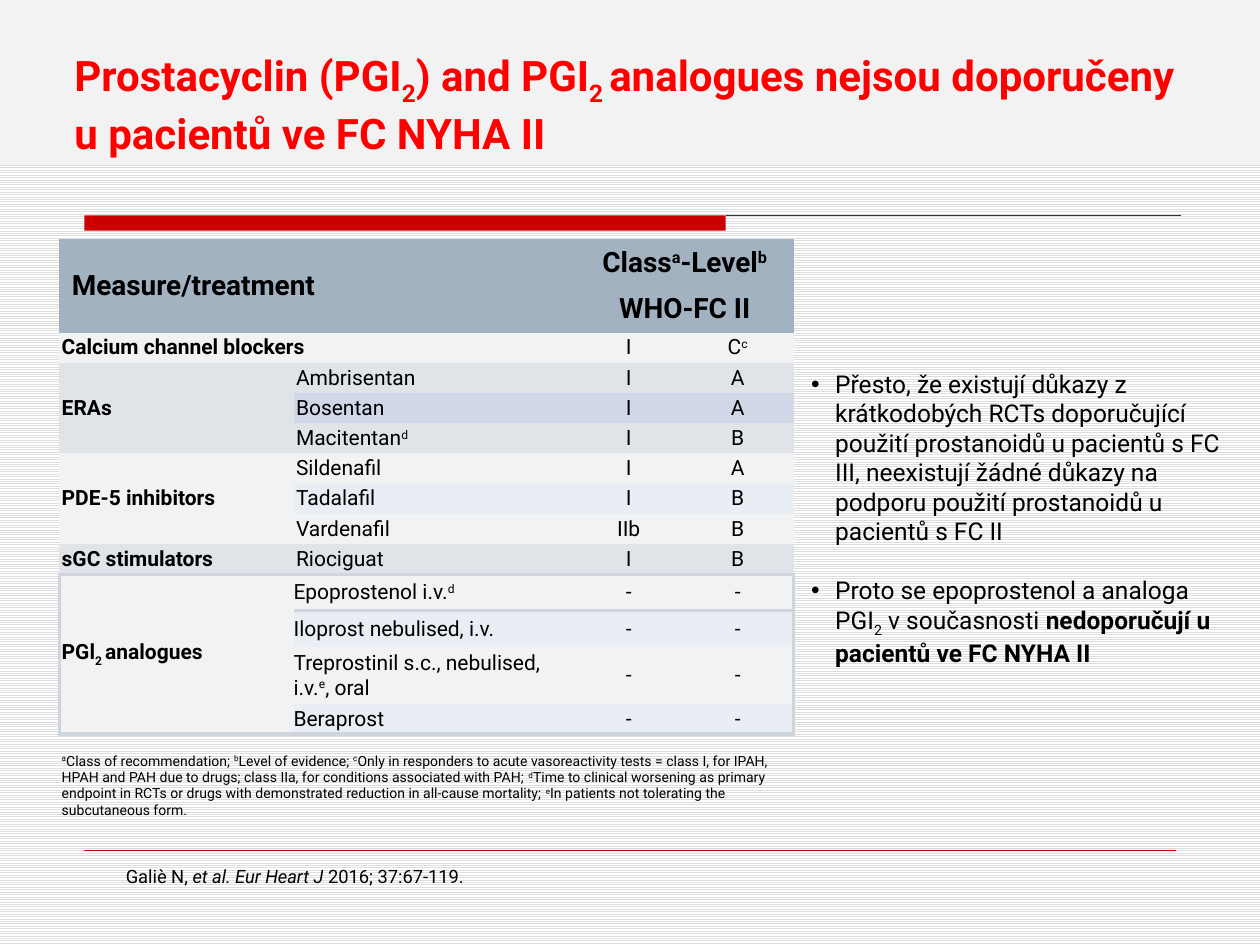
from lxml import etree
from pptx import Presentation
from pptx.dml.color import RGBColor
from pptx.enum.dml import MSO_PATTERN
from pptx.enum.shapes import MSO_CONNECTOR, MSO_SHAPE
from pptx.enum.text import MSO_ANCHOR, MSO_AUTO_SIZE, PP_ALIGN
from pptx.oxml import parse_xml
from pptx.oxml.ns import nsdecls, qn
from pptx.util import Inches, Pt

TOP, MIDDLE, BOTTOM = MSO_ANCHOR.TOP, MSO_ANCHOR.MIDDLE, MSO_ANCHOR.BOTTOM
LEFT, CENTER, RIGHT = PP_ALIGN.LEFT, PP_ALIGN.CENTER, PP_ALIGN.RIGHT
THEME = {
    "font": "Roboto", "text": "000000", "title": "FF0000", "red": "CC0000",
    "rule": "333333", "band": "F2F2F2", "stripe": "DDDDDD", "paper": "FFFFFF",
    "header": "A3B2C1", "pale": "F0F2F4", "grey": "E0E4E9",
    "blue": "D0D8E8", "ice": "E9EDF4", "frame": "CED5DD",
    "title_pt": 24, "header_pt": 16, "body_pt": 14, "cell_pt": 12,
    "cite_pt": 10.5, "note_pt": 8, "frame_pt": 2.25,
}
NO_STYLE = "{2D5ABB26-0587-4C30-8999-92F81FD0307C}"
BASELINE = {"^": "30000", "_": "-25000"}


def color(name):
    return RGBColor.from_string(THEME[name])


def write(p, runs, size, align=LEFT, bold=False, fill="text"):
    """Runs are (text, marks): ^ superscript, _ subscript, b bold, i italic."""
    p.alignment = align
    for text, marks in runs:
        r = p.add_run()
        r.text = text
        r.font.name, r.font.size = THEME["font"], Pt(THEME[size])
        r.font.color.rgb = color(fill)
        r.font.bold = bold or "b" in marks
        r.font.italic = "i" in marks
        for mark in marks:
            if mark in BASELINE:
                r.font._element.set("baseline", BASELINE[mark])


prs = Presentation()
prs.slide_width, prs.slide_height = Inches(10), Inches(7.5)
s = prs.slides.add_slide(prs.slide_layouts[5])

# Striped background
bg = s.background.fill
bg.patterned()
bg.pattern = MSO_PATTERN.LIGHT_HORIZONTAL
bg.fore_color.rgb, bg.back_color.rgb = color("stripe"), color("paper")

# Title band and red bar
for box, name in (((0, 0, 10, 1.31), "band"), ((0.67, 1.71, 5.09, 0.12), "red")):
    sp = s.shapes.add_shape(MSO_SHAPE.RECTANGLE, *map(Inches, box))
    sp.shadow.inherit = False
    sp.fill.solid()
    sp.fill.fore_color.rgb = color(name)
    sp.line.fill.background()
    s.shapes._spTree.remove(sp._element)
    s.shapes._spTree.insert(2 + (name == "red"), sp._element)

# Rules under the title and above the citation
for x1, x2, y, name, width in ((5.76, 9.37, 1.71, "rule", 0.75),
                               (0.67, 9.33, 6.75, "red", 0.25)):
    line = s.shapes.add_connector(MSO_CONNECTOR.STRAIGHT,
                                  Inches(x1), Inches(y), Inches(x2), Inches(y))
    line.line.color.rgb, line.line.width = color(name), Pt(width)
    etree.SubElement(line._element.spPr, qn("a:effectLst"))

# Title
title = s.shapes.title
title.left, title.top, title.width, title.height = map(Inches, (0.49, 0.05, 9, 1.25))
tf = title.text_frame
tf.vertical_anchor, tf.auto_size = BOTTOM, MSO_AUTO_SIZE.NONE
write(tf.paragraphs[0],
      [("Prostacyclin (PGI", ""), ("2", "_"), (") and PGI", ""), ("2 ", "_"),
       ("analogues nejsou doporučeny u pacientů ve FC NYHA II", "")],
      "title_pt", bold=True, fill="title")

# Comments beside the table
tf = s.shapes.add_textbox(*map(Inches, (6.34, 2.88, 3.53, 2.46))).text_frame
tf.word_wrap, tf.auto_size = True, MSO_AUTO_SIZE.SHAPE_TO_FIT_TEXT
comments = [
    [("Přesto, že existují důkazy z krátkodobých RCTs doporučující použití "
      "prostanoidů u pacientů s FC III, neexistují žádné důkazy na podporu "
      "použití prostanoidů u pacientů s FC II", "")],
    [("Proto se epoprostenol a analoga PGI", ""), ("2", "_"), (" v současnosti ", ""),
     ("nedoporučují u pacientů ve FC NYHA II", "b")],
]
for i, runs in enumerate(comments):
    p = tf.add_paragraph() if i else tf.paragraphs[0]
    pPr = p._p.get_or_add_pPr()
    pPr.set("marL", str(Inches(0.19)))
    pPr.set("indent", str(-Inches(0.19)))
    etree.SubElement(pPr, qn("a:buFont")).set("typeface", "Arial")
    etree.SubElement(pPr, qn("a:buChar")).set("char", "•")
    if i:
        p.space_before = Pt(17)
    write(p, runs, "body_pt")

# Table content: group, its row span, drug, class, level, fill
d = ("d", "^")
treatments = [
    ([("Calcium channel blockers", "")], 1, [], "I", [("C", ""), ("c", "^")], "pale"),
    ([("ERAs", "")], 3, [("Ambrisentan", "")], "I", [("A", "")], "grey"),
    ([], 0, [("Bosentan", "")], "I", [("A", "")], "blue"),
    ([], 0, [("Macitentan", ""), d], "I", [("B", "")], "grey"),
    ([("PDE-5 inhibitors", "")], 3, [("Sildenafil", "")], "I", [("A", "")], "pale"),
    ([], 0, [("Tadalafil", "")], "I", [("B", "")], "ice"),
    ([], 0, [("Vardenafil", "")], "IIb", [("B", "")], "pale"),
    ([("sGC stimulators", "")], 1, [("Riociguat", "")], "I", [("B", "")], "grey"),
    ([("PGl", ""), ("2 ", "_"), ("analogues", "")], 4,
     [("Epoprostenol i.v.", ""), d], "-", [("-", "")], "pale"),
    ([], 0, [("Iloprost nebulised, i.v.", "")], "-", [("-", "")], "ice"),
    ([], 0, [("Treprostinil s.c., nebulised, i.v.", ""), ("e", "^"), (", oral", "")],
     "-", [("-", "")], "pale"),
    ([], 0, [("Beraprost", "")], "-", [("-", "")], "ice"),
]
footnote = [
    ("a", "^"), ("Class of recommendation; ", ""), ("b", "^"), ("Level of evidence; ", ""),
    ("c", "^"), ("Only in responders to acute vasoreactivity tests = class I, for IPAH, "
                 "HPAH and PAH due to drugs; class IIa, for conditions associated with PAH; ", ""),
    d, ("Time to clinical worsening as primary endpoint in RCTs or drugs with "
        "demonstrated reduction in all-cause mortality; ", ""),
    ("e", "^"), ("In patients not tolerating the subcutaneous form.", ""),
]
widths = [1.86, 2.24, 0.84, 0.89]
heights = [0.37] * 2 + [0.24] * 8 + [0.29, 0.29, 0.45, 0.24, 1.17]
FIRST, LAST, NOTE = 10, 13, 14  # framed rows and footnote row

frame = s.shapes.add_table(len(heights), len(widths), Inches(0.47), Inches(1.9),
                           Inches(sum(widths)), Inches(sum(heights)))
table = frame.table
table.first_row = table.horz_banding = False
table._tbl.tblPr.find(qn("a:tableStyleId")).text = NO_STYLE
for column, width in zip(table.columns, widths):
    column.width = Inches(width)
for row, height in zip(table.rows, heights):
    row.height = Inches(height)

# Frame around the PGI2 analogues, then fills and margins
for i in range(len(heights)):
    for j in range(len(widths)):
        cell = table.cell(i, j)
        framed = FIRST <= i <= LAST
        sides = {"L": framed and j == 0, "R": framed and j == 3,
                 "T": i in (FIRST, NOTE),
                 "B": i in (FIRST - 1, LAST) or (i, j) == (FIRST, 0)}
        for side in (name for name, shown in sides.items() if shown):
            cell._tc.get_or_add_tcPr().append(parse_xml(
                f'<a:ln{side} {nsdecls("a")} w="{Pt(THEME["frame_pt"])}"><a:solidFill>'
                f'<a:srgbClr val="{THEME["frame"]}"/></a:solidFill></a:ln{side}>'))
        if i == NOTE:
            cell.fill.background()
        else:
            cell.fill.solid()
            cell.fill.fore_color.rgb = color("header" if i < 2 else treatments[i - 2][5])
        inset = Inches(0 if framed and j == 1 else 0.02)
        cell.margin_left = cell.margin_right = cell.margin_top = cell.margin_bottom = inset
        cell.vertical_anchor = MIDDLE

# Header
heads = [(0, 0, 1, 1, [("Measure/treatment", "")], LEFT, 0.1),
         (0, 2, 0, 3, [("Class", ""), ("a", "^"), ("-Level", ""), ("b", "^")], CENTER, 0.04),
         (1, 2, 1, 3, [("WHO-FC II", "")], CENTER, 0.04)]
for top, left, bottom, right, runs, align, inset in heads:
    cell = table.cell(top, left)
    cell.merge(table.cell(bottom, right))
    cell.margin_left = cell.margin_right = Inches(inset)
    cell.margin_top = cell.margin_bottom = Inches(0.05)
    write(cell.text_frame.paragraphs[0], runs, "header_pt", align, bold=True)

# Treatments
for i, (group, span, drug, grade, level, _) in enumerate(treatments, 2):
    if span > 1 or not drug:
        table.cell(i, 0).merge(table.cell(i + span - 1, 0 if drug else 1))
    for j, runs in enumerate((group, drug, [(grade, "")], level)):
        write(table.cell(i, j).text_frame.paragraphs[0], runs, "cell_pt",
              CENTER if j > 1 else LEFT, bold=j == 0)

# Footnote
cell = table.cell(NOTE, 0)
cell.merge(table.cell(NOTE, 3))
cell.vertical_anchor, cell.margin_top = TOP, Inches(0.15)
write(cell.text_frame.paragraphs[0], footnote, "note_pt")

# Citation
tf = s.shapes.add_textbox(*map(Inches, (0.75, 6.82, 3.03, 0.28))).text_frame
tf.word_wrap, tf.auto_size = False, MSO_AUTO_SIZE.SHAPE_TO_FIT_TEXT
write(tf.paragraphs[0], [("Galiè N, ", ""), ("et al. Eur Heart J ", "i"),
                         ("2016; 37:67-119.", "")], "cite_pt", RIGHT)

prs.save("out.pptx")
